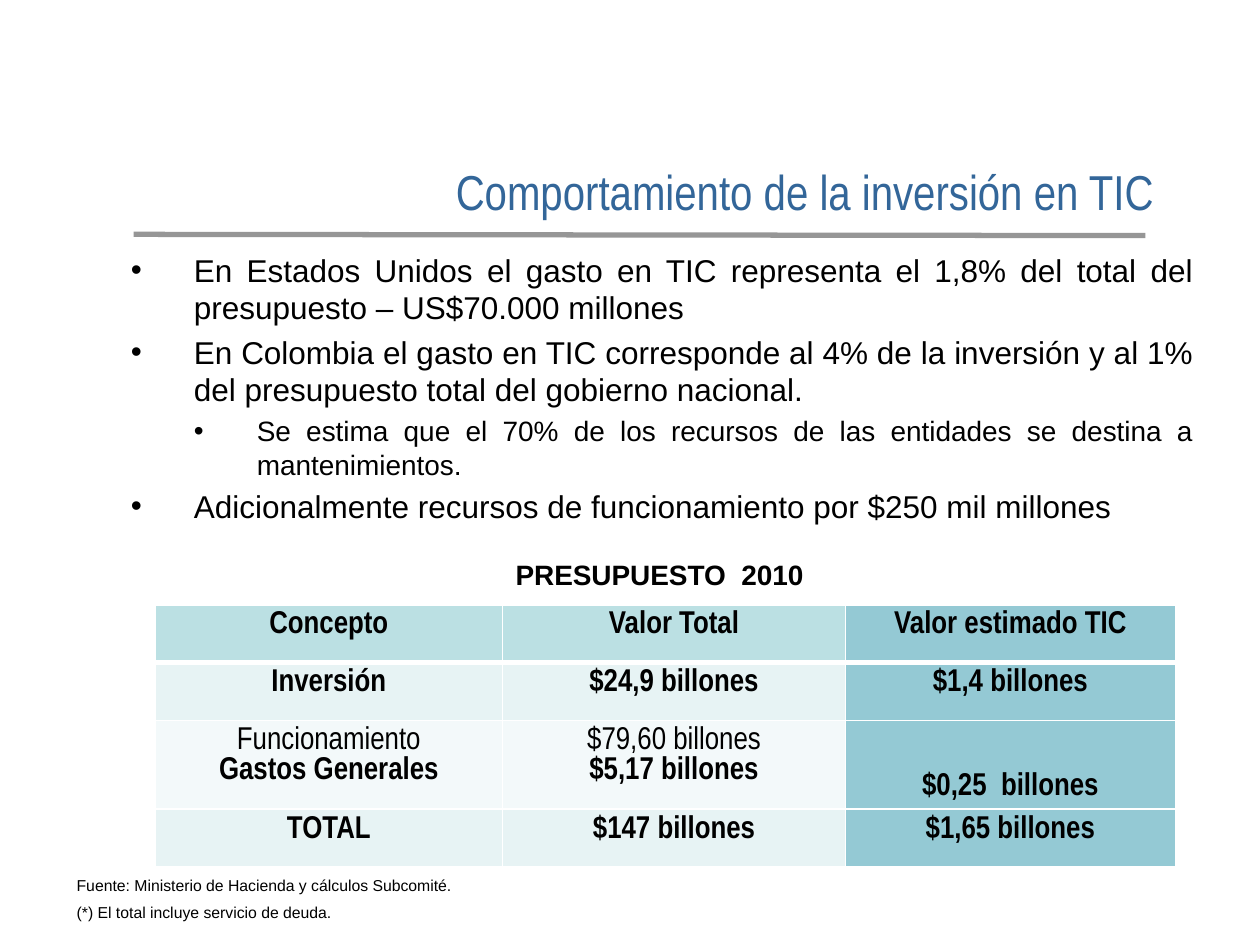
from lxml import etree
from pptx import Presentation
from pptx.dml.color import RGBColor
from pptx.enum.shapes import MSO_CONNECTOR
from pptx.enum.text import MSO_ANCHOR, PP_ALIGN
from pptx.oxml.ns import qn
from pptx.util import Inches, Pt

LEFT, CENTER, RIGHT, JUSTIFY = PP_ALIGN.LEFT, PP_ALIGN.CENTER, PP_ALIGN.RIGHT, PP_ALIGN.JUSTIFY
TOP, BOTTOM = MSO_ANCHOR.TOP, MSO_ANCHOR.BOTTOM
STRAIGHT = MSO_CONNECTOR.STRAIGHT

COLORS = {"text": "000000", "title": "336699", "rule": "969696", "border": "FFFFFF",
          "header": "BBE0E3", "band": "E7F3F4", "light": "F3F9FA", "tic": "94C9D4"}
BODY_FONT, NARROW_FONT = "Arial", "Arial Narrow"


def rgb(name):
    return RGBColor.from_string(COLORS[name])


def write(paragraph, text, size=18, font=BODY_FONT, color="text", bold=False,
          align=LEFT, before=0, bullet_level=None):
    """Fill one paragraph and format it."""
    paragraph.alignment = align
    paragraph.space_before = Pt(before)
    if bullet_level is not None:
        paragraph.level = bullet_level
        properties = paragraph._p.get_or_add_pPr()
        properties.set("marL", str(Inches(0.5 * (bullet_level + 1))))
        properties.set("indent", str(-Inches(0.5)))
        etree.SubElement(properties, qn("a:buFont")).set("typeface", BODY_FONT)
        etree.SubElement(properties, qn("a:buChar")).set("char", "•")
    run = paragraph.add_run()
    run.text = text
    run.font.name, run.font.size, run.font.bold = font, Pt(size), bold
    run.font.color.rgb = rgb(color)


class SlideBuilder:
    def __init__(self, slide):
        self.slide = slide

    def lines(self, frame, lines, **style):
        """Write paragraphs; each line is its text and its own format."""
        for i, (text, own) in enumerate(lines):
            paragraph = frame.add_paragraph() if i else frame.paragraphs[0]
            options = {**style, **own}
            if i == 0:
                options["before"] = 0
            write(paragraph, text, **options)

    def text(self, box, lines, **style):
        frame = self.slide.shapes.add_textbox(*map(Inches, box)).text_frame
        frame.word_wrap = True
        self.lines(frame, lines, **style)

    def line(self, start, end, color, width):
        connector = self.slide.shapes.add_connector(STRAIGHT, *map(Inches, start + end))
        connector.line.color.rgb = rgb(color)
        connector.line.width = Pt(width)
        etree.SubElement(connector._element.spPr, qn("a:effectLst"))

    def border(self, cell, widths):
        properties = cell._tc.get_or_add_tcPr()
        for i, (side, width) in enumerate(widths.items()):
            edge = etree.Element(qn(f"a:ln{side}"), w=str(Pt(width)))
            fill = etree.SubElement(edge, qn("a:solidFill"))
            etree.SubElement(fill, qn("a:srgbClr")).set("val", COLORS["border"])
            properties.insert(i, edge)

    def table(self, origin, widths, heights, rows, fills, low_cell):
        """Add a table; each cell is a list of lines, low_cell sits at its bottom."""
        size = (sum(widths), sum(heights))
        table = self.slide.shapes.add_table(
            len(rows), len(widths), *map(Inches, origin + size)).table
        for column, width in zip(table.columns, widths):
            column.width = Inches(width)
        for r, (row, height) in enumerate(zip(rows, heights)):
            table.rows[r].height = Inches(height)
            for c, lines in enumerate(row):
                cell = table.cell(r, c)
                cell.fill.solid()
                cell.fill.fore_color.rgb = rgb("tic" if c == len(row) - 1 else fills[r])
                cell.vertical_anchor = BOTTOM if (r, c) == low_cell else TOP
                self.border(cell, {"L": 1, "R": 1, "T": 3 if r == 1 else 1,
                                   "B": 3 if r == 0 else 1})
                self.lines(cell.text_frame, lines, font=NARROW_FONT, align=CENTER)


def bold_cell(text):
    return [(text, {"bold": True})]


def bold_row(*texts):
    return [bold_cell(text) for text in texts]


def main():
    deck = Presentation()
    deck.slide_width, deck.slide_height = Inches(10), Inches(7.5)
    builder = SlideBuilder(deck.slides.add_slide(deck.slide_layouts[6]))

    # Key points
    main_point = {"bullet_level": 0, "before": 3.6}
    sub_point = {"bullet_level": 1, "before": 3.2, "size": 16}
    builder.text((0.94, 1.94, 8.63, 2.64), [
        ("En Estados Unidos el gasto en TIC representa el 1,8% del total del "
         "presupuesto – US$70.000 millones", main_point),
        ("En Colombia el gasto en TIC corresponde al 4% de la inversión y al 1% "
         "del presupuesto total del gobierno nacional.", main_point),
        ("Se estima que el 70% de los recursos de las entidades se destina a "
         "mantenimientos.", sub_point),
        ("Adicionalmente recursos de funcionamiento por $250 mil millones", main_point),
    ], align=JUSTIFY)

    # Budget table
    budget = [
        bold_row("Concepto", "Valor Total", "Valor estimado TIC"),
        bold_row("Inversión", "$24,9 billones", "$1,4 billones"),
        [[("Funcionamiento", {})] + bold_cell("Gastos Generales"),
         [("$79,60 billones", {})] + bold_cell("$5,17 billones"),
         bold_cell("$0,25  billones")],
        bold_row("TOTAL", "$147 billones", "$1,65 billones"),
    ]
    builder.table((1.23, 4.8), (2.76, 2.72, 2.62), (0.46, 0.46, 0.61, 0.46),
                  budget, ("header", "band", "light", "band"), low_cell=(2, 2))
    builder.text((3.58, 4.38, 3.31, 0.37), [("PRESUPUESTO  2010", {})],
                 size=16, bold=True, align=CENTER)

    # Source notes
    builder.text((0.51, 6.9, 8.98, 0.48), [
        ("Fuente: Ministerio de Hacienda y cálculos Subcomité.", {}),
        ("(*) El total incluye servicio de deuda.", {}),
    ], size=9, before=4.5)

    # Title and rule
    builder.line((1.06, 1.86), (9.09, 1.87), "rule", 3)
    builder.text((1.14, 1.23, 8.11, 0.57), [("Comportamiento de la inversión en TIC", {})],
                 size=28, font=NARROW_FONT, color="title", align=RIGHT)

    deck.save("out.pptx")


if __name__ == "__main__":
    main()
